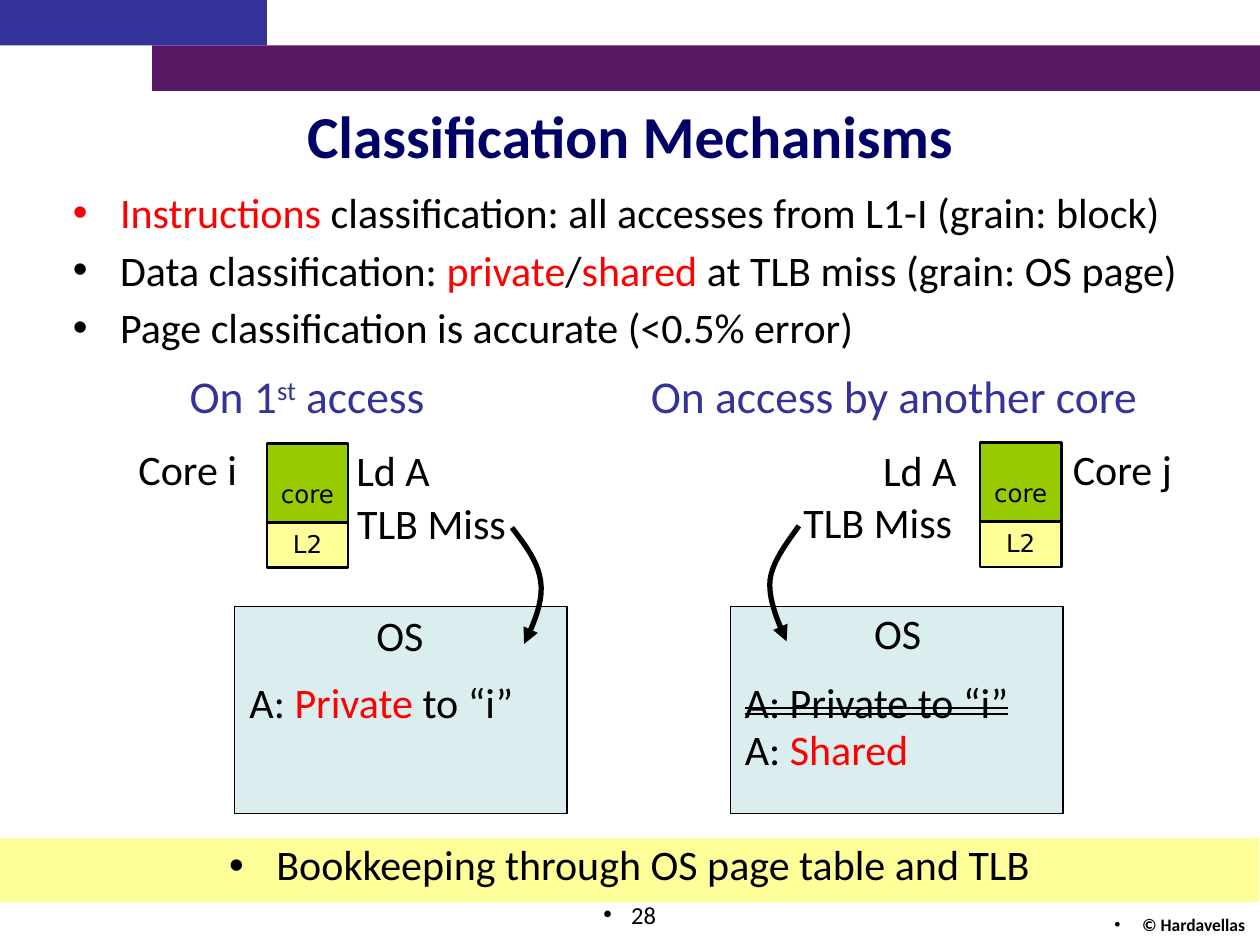
"""Build the slide on classification mechanisms for private and shared pages."""
from lxml import etree
from pptx import Presentation
from pptx.dml.color import RGBColor
from pptx.enum.shapes import MSO_SHAPE
from pptx.enum.text import MSO_ANCHOR, PP_ALIGN
from pptx.oxml.ns import qn
from pptx.util import Pt

RECTANGLE = MSO_SHAPE.RECTANGLE
LEFT, CENTER, RIGHT = PP_ALIGN.LEFT, PP_ALIGN.CENTER, PP_ALIGN.RIGHT
TOP, MIDDLE, BOTTOM = MSO_ANCHOR.TOP, MSO_ANCHOR.MIDDLE, MSO_ANCHOR.BOTTOM
COLORS = {
    "black": "000000", "red": "FF0000", "navy": "000066", "blue": "333399",
    "purple": "571963", "green": "99CC00", "yellow": "FFFF99", "ice": "DAEDEF",
}

deck = Presentation()
deck.slide_width, deck.slide_height = Pt(720), Pt(540)
slide = deck.slides.add_slide(deck.slide_layouts[6])


def rectangle(x, y, width, height, fill, border=0):
    shape = slide.shapes.add_shape(RECTANGLE, Pt(x), Pt(y), Pt(width), Pt(height))
    shape.shadow.inherit = False
    shape.fill.solid()
    shape.fill.fore_color.rgb = RGBColor.from_string(COLORS[fill])
    if border:
        shape.line.width = Pt(border)
        shape.line.color.rgb = RGBColor.from_string(COLORS["black"])
    else:
        shape.line.fill.background()
    return shape


def write(*paragraphs, at=None, shape=None, size=24, font="Calibri", color="black",
          bold=False, align=LEFT, anchor=TOP, wrap=False, spacing=None,
          before=0, hanging=0, bottom=3.6):
    holder = shape or slide.shapes.add_textbox(*map(Pt, at))
    frame = holder.text_frame
    frame.word_wrap, frame.vertical_anchor = wrap, anchor
    frame.margin_bottom = Pt(bottom)
    for index, runs in enumerate(paragraphs):
        paragraph = frame.add_paragraph() if index else frame.paragraphs[0]
        if hanging:
            properties = paragraph._p.get_or_add_pPr()
            properties.set("marL", str(Pt(hanging)))
            properties.set("indent", str(-Pt(hanging)))
            etree.SubElement(properties, qn("a:buFont"), typeface="Arial")
            etree.SubElement(properties, qn("a:buChar"), char="•")
        paragraph.alignment = align
        if spacing:
            paragraph.line_spacing = spacing
        if index:
            paragraph.space_before = Pt(before)
        for words, run_color, effects in [(runs, color, {})] if isinstance(runs, str) else runs:
            run = paragraph.add_run()
            run.text = words
            run.font.name, run.font.size, run.font.bold = font, Pt(size), bold
            run.font.color.rgb = RGBColor.from_string(COLORS[run_color])
            for key, value in effects.items():
                run._r.get_or_add_rPr().set(key, value)


rectangle(87, 26, 633, 26, "purple")
rectangle(0, 0, 152.5, 26, "blue")
write("Classification Mechanisms", at=(0, 51, 720, 52), size=34, color="navy",
      bold=True, align=CENTER, anchor=MIDDLE, wrap=True)
write(
    [("Instructions", "red", {}),
     (" classification: all accesses from L1-I (grain: block)", "black", {})],
    [("Data classification: ", "black", {}), ("private", "red", {}), ("/", "black", {}),
     ("shared", "red", {}), (" at TLB miss (grain: OS page)", "black", {})],
    "Page classification is accurate (<0.5% error)",
    at=(34.5, 103, 666, 129), wrap=True, before=4.2, hanging=27)

write([("On 1", "blue", {}), ("st", "blue", {"baseline": "30000"}), (" access", "blue", {})],
      at=(100, 207, 151, 39), size=26, align=CENTER)
write("On access by another core", at=(363.5, 207, 295, 39), size=26, color="blue", align=CENTER)

scenes = [
    {"os_left": 134, "core_left": 152.5, "core_top": 253.5, "os_label": (207.5, 348, 42, 33),
     "labels": [("Core i", 72, 253, 71), ("Ld A", 196.5, 254, 57), ("TLB Miss", 197, 284, 100)],
     "curve": [(292.5, 301.5), (300.5, 312), (307.5, 321), (309, 332.5),
               (310.5, 343.5), (305.5, 355.5), (299.5, 368)]},
    {"os_left": 417.5, "core_left": 560, "core_top": 253, "os_label": (492, 347, 42, 33),
     "labels": [("Core j", 606, 253, 72), ("Ld A", 497.5, 253.5, 57), ("TLB Miss", 452, 283.5, 100)],
     "curve": [(456.5, 300.5), (449.5, 310.5), (441.5, 320.5), (440, 331.5),
               (439, 342), (444, 354.5), (449.5, 366.5)]},
]
STEPS = 10
for scene in scenes:
    rectangle(scene["os_left"], 346.5, 190, 118.5, "ice", border=0.75)
    left, top = scene["core_left"], scene["core_top"]
    write("core", shape=rectangle(left, top, 46.5, 45, "green", border=1.5), size=14,
          font="DejaVu Sans", align=CENTER, anchor=BOTTOM, bottom=8)
    write("L2", shape=rectangle(left, top + 45, 46.5, 26, "yellow", border=1.5), size=14,
          font="DejaVu Sans", align=CENTER, anchor=MIDDLE, spacing=0.9)
    for words, x, y, width in scene["labels"]:
        write(words, at=(x, y, width, 33), spacing=0.9)
    write("OS", at=scene["os_label"], align=CENTER, spacing=0.9)

    curve = scene["curve"]
    trail = []
    for first in (0, 3):
        controls = curve[first:first + 4]
        for step in range(1, STEPS + 1):
            t = step / STEPS
            weights = ((1 - t) ** 3, 3 * t * (1 - t) ** 2, 3 * t ** 2 * (1 - t), t ** 3)
            trail.append(tuple(Pt(sum(w * point[axis] for w, point in zip(weights, controls)))
                               for axis in (0, 1)))
    builder = slide.shapes.build_freeform(Pt(curve[0][0]), Pt(curve[0][1]))
    builder.add_line_segments(trail, close=False)
    miss_arrow = builder.convert_to_shape()
    miss_arrow.shadow.inherit = False
    miss_arrow.fill.background()
    miss_arrow.line.width = Pt(3)
    miss_arrow.line.color.rgb = RGBColor.from_string(COLORS["black"])
    etree.SubElement(miss_arrow.line._get_or_add_ln(), qn("a:tailEnd"), type="triangle")

write([("A: ", "black", {}), ("Private", "red", {}), (" to “i”", "black", {})],
      at=(135.5, 386.5, 166, 33), spacing=0.9)
write([("A: Private to “i”", "black", {"strike": "dblStrike"})],
      at=(418.5, 386.5, 189, 33), wrap=True, spacing=0.9)
write([("A: ", "black", {}), ("Shared", "red", {})], at=(418.5, 413, 109, 33), spacing=0.9)

write("Bookkeeping through OS page table and TLB", shape=rectangle(0, 479, 719.5, 36.5, "yellow"),
      align=CENTER, wrap=True, spacing=0.9, hanging=27)
write("28", at=(214, 510.5, 168, 37), size=14, align=RIGHT, wrap=True, hanging=16)
write("© Hardavellas", at=(480, 519, 238.5, 18), size=10, bold=True, align=RIGHT,
      wrap=True, hanging=16)
deck.save("out.pptx")
